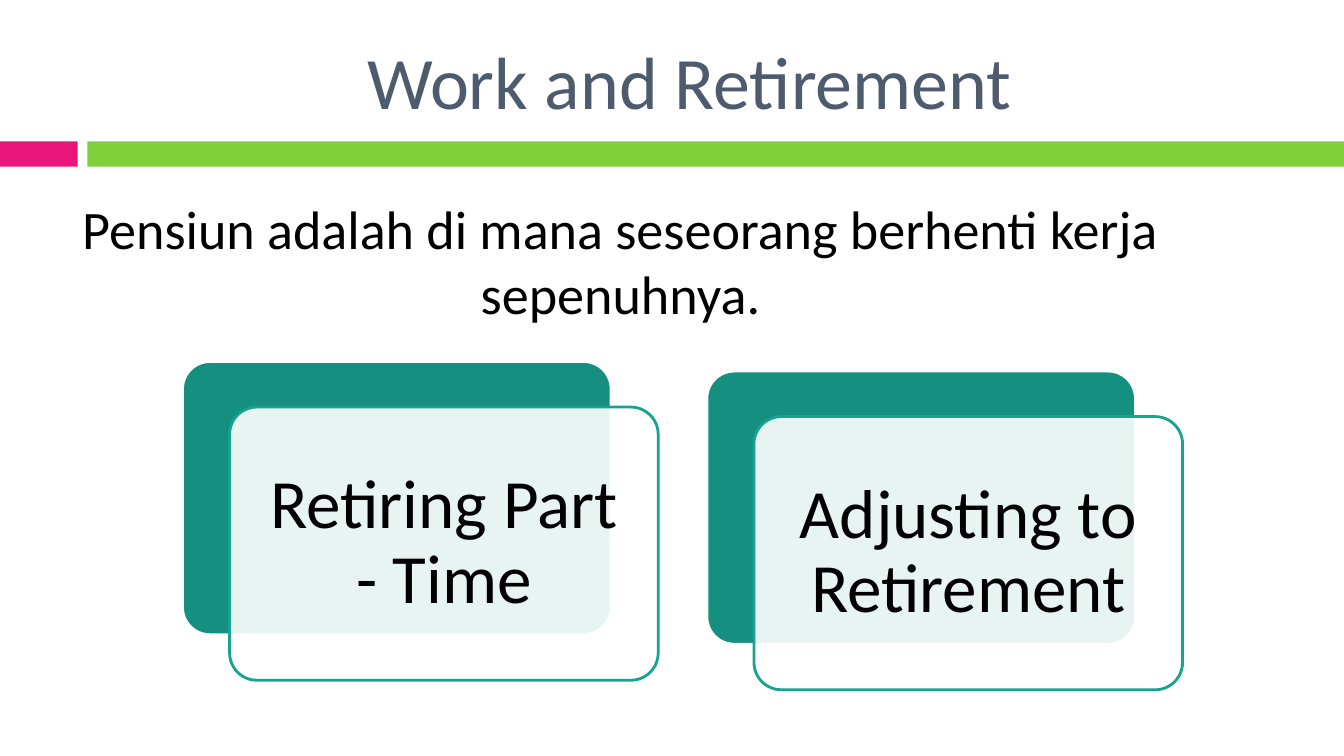
from dataclasses import dataclass

import pptx
import pptx.dml.color
import pptx.enum.shapes
import pptx.enum.text
import pptx.oxml
import pptx.oxml.ns
import pptx.util

Cm = pptx.util.Cm
Pt = pptx.util.Pt
SHAPE = pptx.enum.shapes.MSO_SHAPE


@dataclass(frozen=True)
class Theme:
    font: str = "Calibri"
    title: str = "4E5B6F"
    text: str = "000000"
    white: str = "FFFFFF"
    pink: str = "EA157A"
    green: str = "7FD13B"
    teal: str = "158F7F"
    outline: str = "18A290"
    title_size: float = 39.6
    body_size: float = 29
    card_size: float = 37


THEME = Theme()


def rgb(color):
    return pptx.dml.color.RGBColor.from_string(color)


def write(sp, text, size, color, anchor):
    tf = sp.text_frame
    tf.text = text
    tf.word_wrap = True
    tf.auto_size = pptx.enum.text.MSO_AUTO_SIZE.NONE
    tf.vertical_anchor = anchor
    p = tf.paragraphs[0]
    p.alignment = pptx.enum.text.PP_ALIGN.CENTER
    font = p.runs[0].font
    font.name, font.size = THEME.font, Pt(size)
    font.color.rgb = rgb(color)
    return tf


def add_block(slide, kind, box, fill, line=None):
    sp = slide.shapes.add_shape(kind, *map(Cm, box))
    sp.shadow.inherit = False
    sp.fill.solid()
    sp.fill.fore_color.rgb = rgb(fill)
    if line:
        sp.line.color.rgb = rgb(line)
        sp.line.width = Pt(1.5)
    else:
        sp.line.fill.background()
    return sp


def set_opacity(sp, percent):
    color = sp.fill._xPr.find(".//" + pptx.oxml.ns.qn("a:srgbClr"))
    alpha = pptx.oxml.parse_xml(
        f'<a:alpha {pptx.oxml.ns.nsdecls("a")} val="{percent * 1000}"/>')
    color.append(alpha)


def add_title(slide, box, text):
    sp = slide.shapes.title
    sp.left, sp.top, sp.width, sp.height = map(Cm, box)
    write(sp, text, THEME.title_size, THEME.title,
          pptx.enum.text.MSO_ANCHOR.MIDDLE)


def add_divider(slide, box, accent=1.47, gap=0.18):
    """A short pink bar, a gap and a green bar that fills the rest of the box."""
    x, y, w, h = box
    start = accent + gap
    add_block(slide, SHAPE.RECTANGLE, (x, y, accent, h), THEME.pink)
    add_block(slide, SHAPE.RECTANGLE, (x + start, y, w - start, h), THEME.green)


def add_body(slide, box, text):
    sp = slide.shapes.add_textbox(*map(Cm, box))
    write(sp, text, THEME.body_size, THEME.text, pptx.enum.text.MSO_ANCHOR.TOP)


def add_card(slide, box, text, dx=0.89, dy=0.86):
    """A teal panel with a translucent text panel shifted down and right."""
    x, y, w, h = box
    w, h = w - dx, h - dy
    back = add_block(slide, SHAPE.ROUNDED_RECTANGLE, (x, y, w, h),
                     THEME.teal, THEME.white)
    front = add_block(slide, SHAPE.ROUNDED_RECTANGLE, (x + dx, y + dy, w, h),
                      THEME.white, THEME.outline)
    for sp in (back, front):
        sp.adjustments[0] = 0.1
    set_opacity(front, 90)
    tf = write(front, text, THEME.card_size, THEME.text,
               pptx.enum.text.MSO_ANCHOR.MIDDLE)
    tf.margin_left = tf.margin_right = Cm(0.35)
    tf.paragraphs[0].line_spacing = 0.9


def add_cards(slide, box, labels, gap=0.92, drop=0.18):
    """Equal cards in a row, each a little lower than the one before."""
    x, y, w, h = box
    n = len(labels)
    card_w = (w - gap * (n - 1)) / n
    card_h = h - drop * (n - 1)
    for i, label in enumerate(labels):
        add_card(slide, (x + i * (card_w + gap), y + i * drop, card_w, card_h),
                 label)


def main():
    prs = pptx.Presentation()
    prs.slide_width, prs.slide_height = Cm(25.4), Cm(14.28)
    slide = prs.slides.add_slide(prs.slide_layouts.get_by_name("Title Only"))
    add_divider(slide, (0, 2.67, 25.4, 0.48))
    add_title(slide, (1.7, 0.48, 22.66, 2.06), "Work and Retirement")
    add_body(slide, (0.3, 3.56, 22.86, 2.9),
             "Pensiun adalah di mana seseorang berhenti kerja sepenuhnya.")
    add_cards(slide, (3.45, 6.83, 18.9, 6.2),
              ["Retiring Part - Time", "Adjusting to Retirement"])
    prs.save("out.pptx")


if __name__ == "__main__":
    main()
